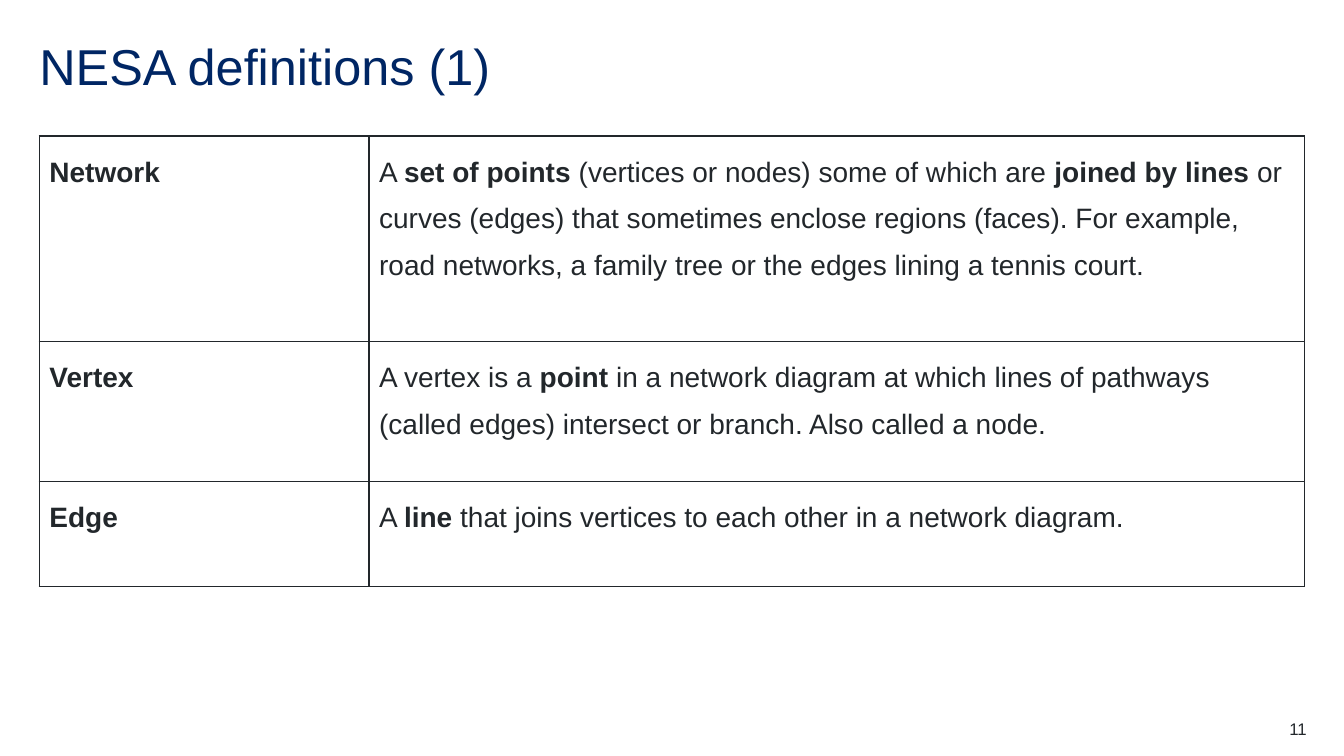
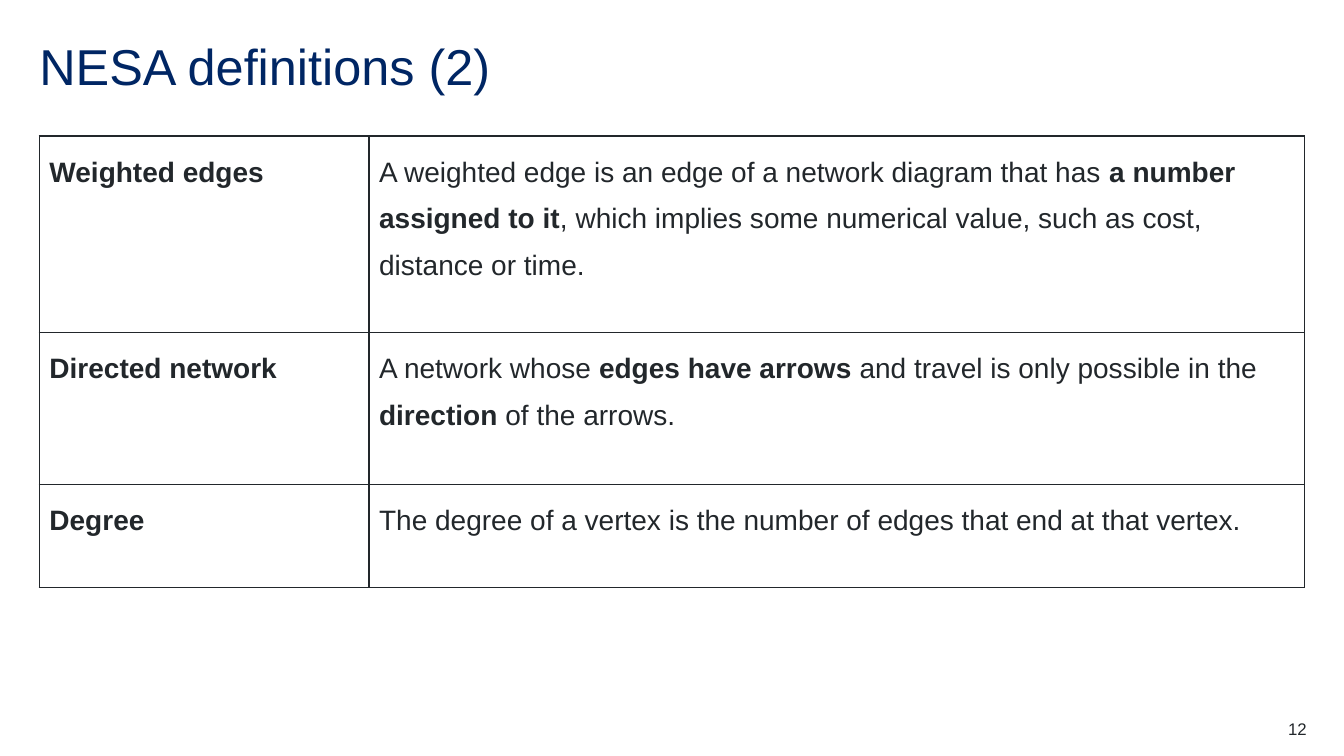
from pptx import Presentation
from pptx.dml.color import RGBColor
from pptx.enum.text import MSO_ANCHOR, PP_ALIGN
from pptx.oxml import parse_xml
from pptx.oxml.ns import nsdecls
from pptx.util import Inches, Pt

COLORS = {"title": "002664", "text": "22272B", "background": "FFFFFF"}
FONT = "Arial"
LEFT = 0.39
COLUMN_WIDTHS = [3.27, 9.28]

# Double asterisks mark the bold parts of the table text.
SLIDES = [
    {
        "title": "NESA definitions (1)",
        "number": "11",
        "heights": [2.04, 1.39, 1.04],
        "rows": [
            ("**Network**",
             "A **set of points **(vertices or nodes) some of which are "
             "**joined by lines **or curves (edges) that sometimes enclose "
             "regions (faces). For example, road networks, a family tree or "
             "the edges lining a tennis court."),
            ("**Vertex**",
             "A vertex is a **point **in a network diagram at which lines of "
             "pathways (called edges) intersect or branch. Also called a node."),
            ("**Edge**",
             "A **line** that joins vertices to each other in a network diagram."),
        ],
    },
    {
        "title": "NESA definitions (2)",
        "number": "12",
        "heights": [1.95, 1.51, 1.02],
        "rows": [
            ("**Weighted edges**",
             "A weighted edge is an edge of a network diagram that has "
             "**a number assigned to it**, which implies some numerical value, "
             "such as cost, distance or time."),
            ("**Directed network**",
             "A network whose **edges have arrows **and travel is only "
             "possible in the **direction **of the arrows."),
            ("**Degree**",
             "The degree of a vertex is the number of edges that end at that "
             "vertex."),
        ],
    },
]


def style_font(font, size, color):
    font.name = FONT
    font.size = Pt(size)
    font.color.rgb = RGBColor.from_string(COLORS[color])


def fill_cell(cell, text):
    """Write text with bold parts into a bordered cell."""
    p = cell.text_frame.paragraphs[0]
    p.line_spacing = 1.5
    p.space_after = Pt(12)
    for i, part in enumerate(text.split("**")):
        if part:
            r = p.add_run()
            r.text = part
            style_font(r.font, 20, "text")
            r.font.bold = i % 2 == 1
    tcPr = cell._tc.get_or_add_tcPr()
    for side in ("lnL", "lnR", "lnT", "lnB"):
        tcPr.append(parse_xml(
            f'<a:{side} {nsdecls("a")} w="12700"><a:solidFill>'
            f'<a:srgbClr val="{COLORS["text"]}"/></a:solidFill></a:{side}>'))
    cell.fill.solid()
    cell.fill.fore_color.rgb = RGBColor.from_string(COLORS["background"])


prs = Presentation()
prs.slide_width, prs.slide_height = Inches(13.33), Inches(7.5)

for content in SLIDES:
    s = prs.slides.add_slide(prs.slide_layouts[5])

    title = s.shapes.title
    title.left, title.top = Inches(LEFT), Inches(0.39)
    title.width, title.height = Inches(12.56), Inches(0.6)
    number = s.shapes.add_textbox(Inches(12.17), Inches(7.13),
                                  Inches(0.79), Inches(0.2))
    for sp, text, size, color, align in (
            (title, content["title"], 36, "title", PP_ALIGN.LEFT),
            (number, content["number"], 12, "text", PP_ALIGN.RIGHT)):
        tf = sp.text_frame
        tf.text = text
        tf.word_wrap = True
        tf.margin_left = tf.margin_right = tf.margin_top = tf.margin_bottom = 0
        p = tf.paragraphs[0]
        p.alignment = align
        style_font(p.runs[0].font, size, color)
    title.text_frame.vertical_anchor = MSO_ANCHOR.MIDDLE
    title.text_frame.paragraphs[0].line_spacing = 0.9

    rows, heights = content["rows"], content["heights"]
    table = s.shapes.add_table(
        len(rows), len(COLUMN_WIDTHS), Inches(LEFT), Inches(1.35),
        Inches(sum(COLUMN_WIDTHS)), Inches(sum(heights))).table
    table.first_row = table.horz_banding = False
    for column, width in zip(table.columns, COLUMN_WIDTHS):
        column.width = Inches(width)
    for row, height, texts in zip(table.rows, heights, rows):
        row.height = Inches(height)
        for cell, text in zip(row.cells, texts):
            fill_cell(cell, text)

prs.save("out.pptx")
